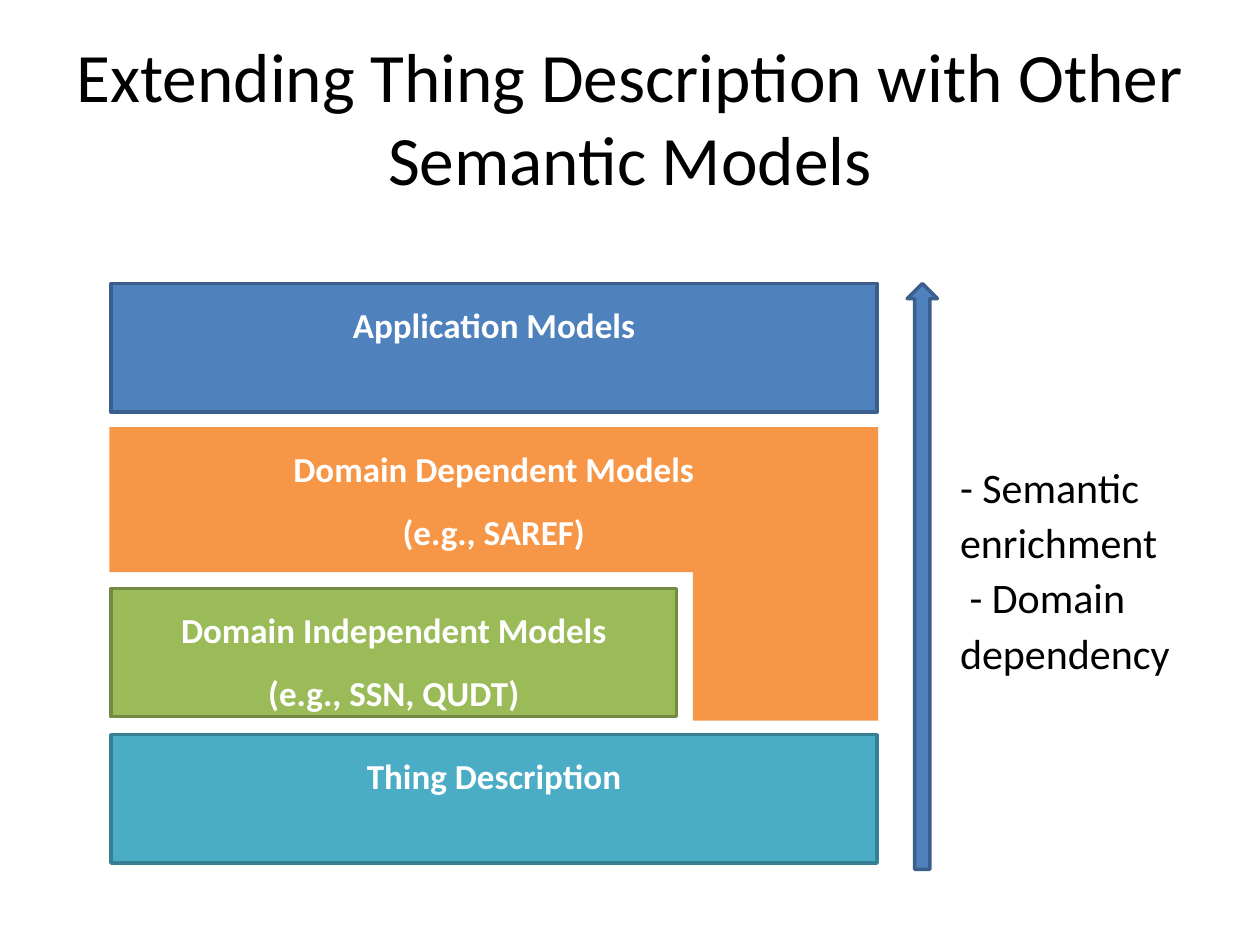
from dataclasses import dataclass
from typing import Optional

from pptx import Presentation
from pptx.dml.color import RGBColor
from pptx.enum.shapes import MSO_SHAPE as Shape
from pptx.enum.text import MSO_ANCHOR as Anchor, PP_ALIGN as Align
from pptx.util import Pt

FONT = "Calibri"
COLORS = {
    "black": "000000",
    "white": "FFFFFF",
    "blue": "4F81BD",
    "blue_edge": "3A5F8C",
    "orange": "F79646",
    "green": "9BBB59",
    "green_edge": "738A42",
    "teal": "4BACC6",
    "teal_edge": "377F92",
}


@dataclass(frozen=True)
class Box:
    left: float
    top: float
    width: float
    height: float


@dataclass(frozen=True)
class Block:
    box: Box
    fill: str
    edge: Optional[str] = None
    lines: tuple[str, ...] = ()
    shape: Shape = Shape.RECTANGLE


@dataclass(frozen=True)
class TextStyle:
    size: float
    color: str = "black"
    bold: bool = False
    align: Align = Align.LEFT
    anchor: Anchor = Anchor.TOP
    inset: tuple[float, float] = (0, 0)
    spacing: float = 1.0
    after: float = 0


TITLE = TextStyle(39.6, align=Align.CENTER, anchor=Anchor.MIDDLE, inset=(7.2, 3.6))
LABEL = TextStyle(20, "white", True, Align.CENTER, inset=(11.52, 11.52), after=12)
NOTE = TextStyle(24, spacing=1.1)

LEFT, TOP, WIDTH, HEIGHT = 63.4, 162, 437.8, 73.4

BLOCKS = (
    Block(Box(518.4, TOP, 17.28, 334.8), "blue", "blue_edge", shape=Shape.UP_ARROW),
    Block(Box(LEFT, 419.8, WIDTH, HEIGHT), "teal", "teal_edge", ("Thing Description",)),
    Block(Box(LEFT, 336.2, 323.3, HEIGHT), "green", "green_edge",
          ("Domain Independent Models", "(e.g., SSN, QUDT)")),
    Block(Box(62.6, 244.1, 439.2, 82.8), "orange",
          lines=("Domain Dependent Models", "(e.g., SAREF)")),
    Block(Box(LEFT, TOP, WIDTH, HEIGHT), "blue", "blue_edge", ("Application Models",)),
    Block(Box(396, 326.9, 105.8, 84.9), "orange"),
)


def rgb(name: str) -> RGBColor:
    return RGBColor.from_string(COLORS[name])


def place(box: Box) -> tuple[Pt, ...]:
    return tuple(Pt(v) for v in (box.left, box.top, box.width, box.height))


def write(tf, lines: tuple[str, ...], style: TextStyle) -> None:
    tf.word_wrap = True
    tf.vertical_anchor = style.anchor
    tf.margin_left = tf.margin_right = Pt(style.inset[0])
    tf.margin_top = tf.margin_bottom = Pt(style.inset[1])
    for i, line in enumerate(lines):
        p = tf.add_paragraph() if i else tf.paragraphs[0]
        p.text = line
        p.alignment = style.align
        p.line_spacing = style.spacing
        p.space_after = Pt(style.after)
        p.font.name = FONT
        p.font.size = Pt(style.size)
        p.font.bold = style.bold
        p.font.color.rgb = rgb(style.color)


def draw_block(s, block: Block) -> None:
    sp = s.shapes.add_shape(block.shape, *place(block.box))
    sp.shadow.inherit = False
    sp.fill.solid()
    sp.fill.fore_color.rgb = rgb(block.fill)
    if block.edge:
        sp.line.color.rgb = rgb(block.edge)
        sp.line.width = Pt(2)
    else:
        sp.line.fill.background()
    if block.lines:
        write(sp.text_frame, block.lines, LABEL)


def draw_text(s, box: Box, lines: tuple[str, ...], style: TextStyle) -> None:
    sp = s.shapes.add_textbox(*place(box))
    write(sp.text_frame, lines, style)


def main() -> None:
    prs = Presentation()
    prs.slide_width, prs.slide_height = Pt(720), Pt(540)
    s = prs.slides.add_slide(prs.slide_layouts[6])
    draw_text(s, Box(36, 21.6, 648, 90),
              ("Extending Thing Description with Other Semantic Models",), TITLE)
    draw_text(s, Box(548.6, 260.6, 136.1, 128.2),
              ("- Semantic enrichment", " - Domain dependency"), NOTE)
    for block in BLOCKS:
        draw_block(s, block)
    prs.save("out.pptx")


if __name__ == "__main__":
    main()
